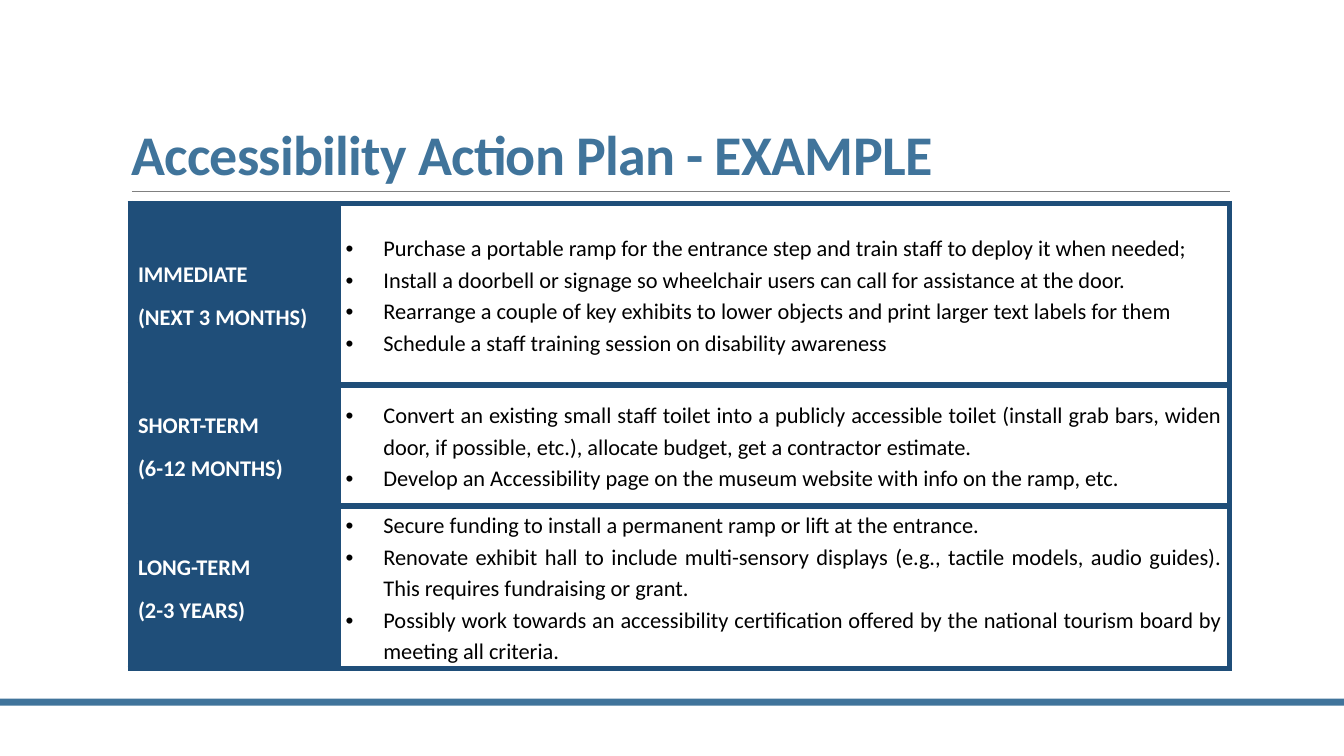
from dataclasses import dataclass

from lxml import etree
from pptx import Presentation
from pptx.dml.color import RGBColor
from pptx.enum.shapes import MSO_CONNECTOR, MSO_SHAPE
from pptx.enum.text import MSO_ANCHOR, PP_ALIGN
from pptx.oxml import parse_xml
from pptx.oxml.ns import nsdecls, qn
from pptx.util import Pt

LEFT, JUSTIFY = PP_ALIGN.LEFT, PP_ALIGN.JUSTIFY
MIDDLE, BOTTOM = MSO_ANCHOR.MIDDLE, MSO_ANCHOR.BOTTOM
STRAIGHT, RECTANGLE = MSO_CONNECTOR.STRAIGHT, MSO_SHAPE.RECTANGLE


@dataclass(frozen=True)
class Theme:
    font: str = "Calibri"
    title_size: int = 40
    body_size: int = 16
    accent: RGBColor = RGBColor(0x40, 0x74, 0x9B)
    navy: RGBColor = RGBColor(0x1F, 0x4E, 0x79)
    rule: RGBColor = RGBColor(0x80, 0x80, 0x80)
    white: RGBColor = RGBColor(0xFF, 0xFF, 0xFF)
    black: RGBColor = RGBColor(0, 0, 0)


theme = Theme()


def write(frame, lines, *, size, color, bold=False, align=LEFT, spacing=1.15,
          after=0, last_after=0, bullet_indent=None, tracking=None):
    for number, line in enumerate(lines):
        paragraph = frame.paragraphs[0] if number == 0 else frame.add_paragraph()
        paragraph.alignment = align
        paragraph.line_spacing = spacing
        paragraph.space_before = Pt(0)
        paragraph.space_after = Pt(last_after if line == lines[-1] else after)
        if bullet_indent:
            properties = paragraph._p.get_or_add_pPr()
            properties.set("marL", str(Pt(bullet_indent)))
            properties.set("indent", str(-Pt(bullet_indent)))
            bullet_font = etree.SubElement(properties, qn("a:buFont"))
            bullet_font.set("typeface", "Arial")
            etree.SubElement(properties, qn("a:buChar")).set("char", "•")
        run = paragraph.add_run()
        run.text = line
        run.font.name = theme.font
        run.font.size = Pt(size)
        run.font.bold = bold
        run.font.color.rgb = color
        if tracking:
            run._r.get_or_add_rPr().set("spc", str(round(tracking * 100)))


def add_borders(cell, color, width):
    for position, side in enumerate(("lnL", "lnR", "lnT", "lnB")):
        border = parse_xml(
            f'<a:{side} {nsdecls("a")} w="{Pt(width)}"><a:solidFill>'
            f'<a:srgbClr val="{color}"/></a:solidFill></a:{side}>')
        cell._tc.get_or_add_tcPr().insert(position, border)


prs = Presentation()
prs.slide_width, prs.slide_height = Pt(960), Pt(540)
slide = prs.slides.add_slide(prs.slide_layouts[6])

# Footer band
footer_band = slide.shapes.add_shape(RECTANGLE, 0, Pt(499), Pt(960), Pt(5))
footer_band.shadow.inherit = False
footer_band.fill.solid()
footer_band.fill.fore_color.rgb = theme.accent
footer_band.line.fill.background()

# Title and the rule below it
title_rule = slide.shapes.add_connector(
    STRAIGHT, Pt(94.3), Pt(136.8), Pt(878.8), Pt(136.8))
title_rule.line.color.rgb = theme.rule
title_rule.line.width = Pt(0.5)
etree.SubElement(title_rule._element.spPr, qn("a:effectLst"))

title = slide.shapes.add_textbox(Pt(86.8), Pt(22.3), Pt(792), Pt(114.5)).text_frame
title.word_wrap = True
title.vertical_anchor = BOTTOM
write(title, ["Accessibility Action Plan - EXAMPLE"], size=theme.title_size,
      color=theme.accent, bold=True, spacing=0.85, tracking=-0.5)

# Plan: row height, horizon, actions, space after the last action
plan = [
    (129.6, ["IMMEDIATE", "(NEXT 3 MONTHS)"], [
        "Purchase a portable ramp for the entrance step and train staff to deploy it when needed;",
        "Install a doorbell or signage so wheelchair users can call for assistance at the door.",
        "Rearrange a couple of key exhibits to lower objects and print larger text labels for them",
        "Schedule a staff training session on disability awareness",
    ], 0),
    (86.4, ["SHORT-TERM", "(6-12 MONTHS)"], [
        "Convert an existing small staff toilet into a publicly accessible toilet (install grab bars, "
        "widen door, if possible, etc.), allocate budget, get a contractor estimate.",
        "Develop an Accessibility page on the museum website with info on the ramp, etc.",
    ], 8),
    (116, ["LONG-TERM", "(2-3 YEARS)"], [
        "Secure funding to install a permanent ramp or lift at the entrance.",
        "Renovate exhibit hall to include multi-sensory displays (e.g., tactile models, audio guides). "
        "This requires fundraising or grant.",
        "Possibly work towards an accessibility certification offered by the national tourism board "
        "by meeting all criteria.",
    ], 0),
]
column_widths = (148.3, 636.6)

# Plan table
plan_table = slide.shapes.add_table(
    len(plan), len(column_widths), Pt(93.2), Pt(145.4),
    Pt(sum(column_widths)), Pt(sum(row[0] for row in plan))).table
plan_table.first_row = False
plan_table.horz_banding = False
for column, width in zip(plan_table.columns, column_widths):
    column.width = Pt(width)

for row, (height, horizon, actions, last_after) in zip(plan_table.rows, plan):
    row.height = Pt(height)
    horizon_cell, actions_cell = row.cells
    for cell in (horizon_cell, actions_cell):
        cell.vertical_anchor = MIDDLE
        cell.margin_left = cell.margin_right = Pt(5.4)
        cell.margin_top = cell.margin_bottom = 0
        add_borders(cell, theme.navy, 4.5)
    horizon_cell.fill.solid()
    horizon_cell.fill.fore_color.rgb = theme.navy
    actions_cell.fill.background()
    write(horizon_cell.text_frame, horizon, size=theme.body_size,
          color=theme.white, bold=True, after=8, last_after=8)
    write(actions_cell.text_frame, actions, size=theme.body_size,
          color=theme.black, align=JUSTIFY, last_after=last_after, bullet_indent=27)

prs.save("out.pptx")
